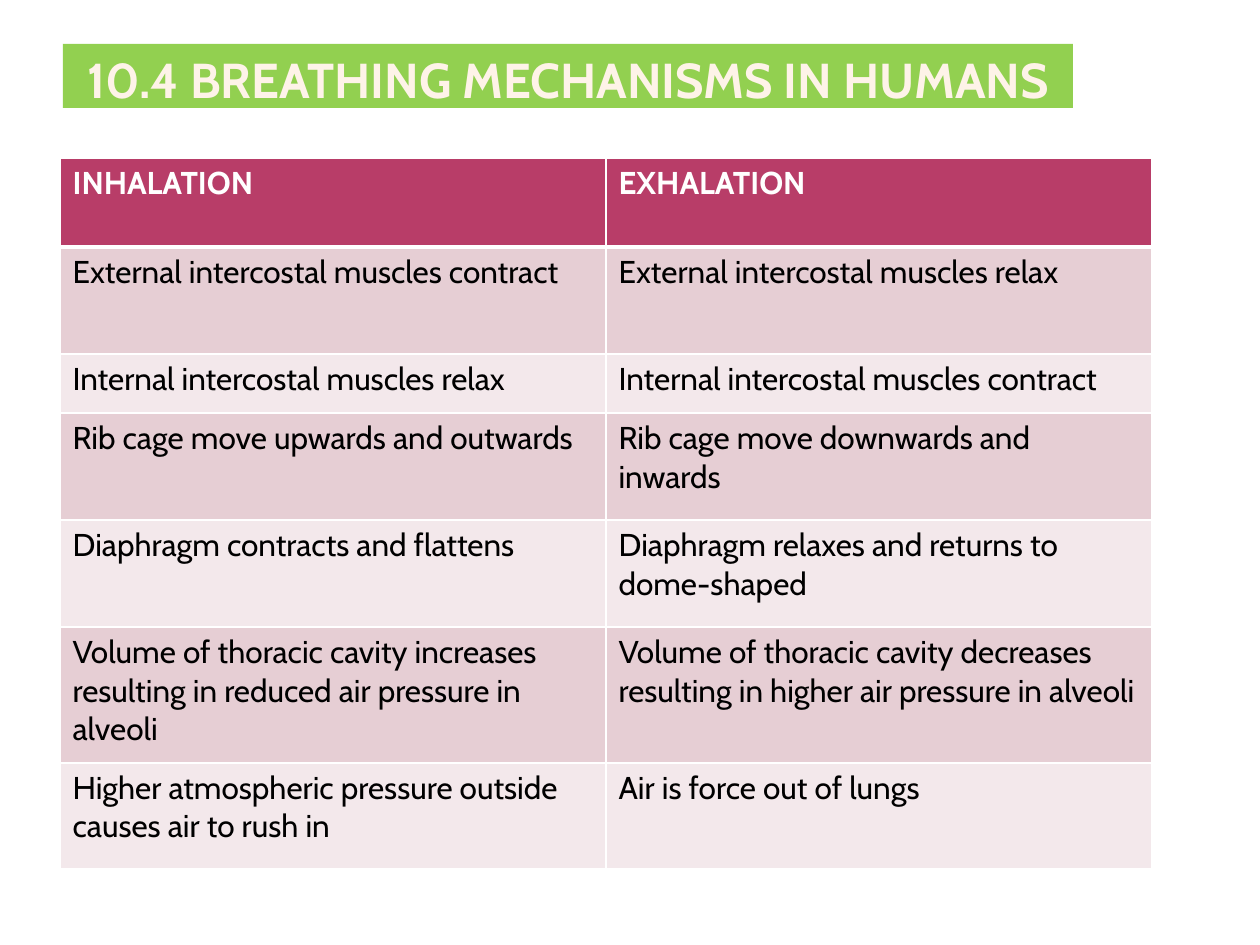
from lxml import etree
from pptx import Presentation
from pptx.dml.color import RGBColor
from pptx.enum.shapes import MSO_SHAPE
from pptx.enum.text import MSO_ANCHOR, PP_ALIGN
from pptx.oxml.ns import qn
from pptx.util import Pt

RECTANGLE = MSO_SHAPE.RECTANGLE
TOP, BOTTOM = MSO_ANCHOR.TOP, MSO_ANCHOR.BOTTOM
LEFT, CENTER = PP_ALIGN.LEFT, PP_ALIGN.CENTER

EMU_PER_PX = 914400 / 126
FONT = "Cabin"

WHITE = RGBColor(0xFF, 0xFF, 0xFF)
BLACK = RGBColor(0, 0, 0)
CREAM = RGBColor(0xFE, 0xF3, 0xE8)
GREEN = RGBColor(0x92, 0xD0, 0x50)
CRIMSON = RGBColor(0xB8, 0x3D, 0x68)
BANDS = (RGBColor(0xE6, 0xCE, 0xD4), RGBColor(0xF3, 0xE8, 0xEB))

BREATHING = [
    ("INHALATION", "EXHALATION"),
    ("External intercostal muscles contract", "External intercostal muscles relax"),
    ("Internal intercostal muscles relax", "Internal intercostal muscles contract"),
    ("Rib cage move upwards and outwards", "Rib cage move downwards and inwards"),
    ("Diaphragm contracts and flattens",
     "Diaphragm relaxes and returns to dome-shaped"),
    ("Volume of thoracic cavity increases resulting in reduced air pressure in alveoli",
     "Volume of thoracic cavity decreases resulting in higher air pressure in alveoli"),
    ("Higher atmospheric pressure outside causes air to rush in",
     "Air is force out of lungs"),
]
ROW_HEIGHTS = (89, 107, 59, 107, 107, 136, 106)
COLUMN_WIDTH = 546


def px(length):
    return round(length * EMU_PER_PX)


def write_text(frame, text, size=18, color=BLACK, bold=False, align=LEFT):
    frame.word_wrap = True
    paragraph = frame.paragraphs[0]
    paragraph.alignment = align
    run = paragraph.add_run()
    run.text = text
    run.font.name = FONT
    run.font.size = Pt(size)
    run.font.bold = bold
    run.font.color.rgb = color


def set_borders(cell, color, **widths):
    """Draw the left, right, top and bottom borders, with widths in points."""
    properties = cell._tc.get_or_add_tcPr()
    for index, side in enumerate("LRTB"):
        line = etree.Element(qn(f"a:ln{side}"), w=str(Pt(widths.get(side, 1))))
        fill = etree.SubElement(line, qn("a:solidFill"))
        etree.SubElement(fill, qn("a:srgbClr"), val=str(color))
        properties.insert(index, line)


class SlideBuilder:
    def __init__(self, slide):
        self.slide = slide

    def banner(self, text, left, top, width, height):
        box = self.slide.shapes.add_shape(
            RECTANGLE, px(left), px(top), px(width), px(height))
        box.shadow.inherit = False
        box.fill.solid()
        box.fill.fore_color.rgb = GREEN
        box.line.fill.background()
        frame = box.text_frame
        frame.margin_left = frame.margin_right = px(6)
        frame.margin_top = frame.margin_bottom = 0
        frame.vertical_anchor = BOTTOM
        write_text(frame, text, size=28, color=CREAM, bold=True, align=CENTER)

    def comparison(self, rows, left, top, column_width, row_heights):
        column_count = len(rows[0])
        table = self.slide.shapes.add_table(
            len(rows), column_count, px(left), px(top),
            px(column_width * column_count), px(sum(row_heights))).table
        for column in table.columns:
            column.width = px(column_width)
        for index, (texts, height) in enumerate(zip(rows, row_heights)):
            table.rows[index].height = px(height)
            for column, text in enumerate(texts):
                self.cell(table.cell(index, column), text, index)

    def cell(self, cell, text, row):
        header = row == 0
        cell.vertical_anchor = TOP
        cell.fill.solid()
        cell.fill.fore_color.rgb = CRIMSON if header else BANDS[(row - 1) % 2]
        set_borders(cell, WHITE, T=3 if row == 1 else 1, B=3 if header else 1)
        write_text(cell.text_frame, text, color=WHITE if header else BLACK,
                   bold=header)


def main():
    presentation = Presentation()
    presentation.slide_width = px(1260)
    presentation.slide_height = px(945)
    blank = presentation.slide_layouts[6]
    builder = SlideBuilder(presentation.slides.add_slide(blank))

    # Title
    builder.banner("10.4 BREATHING MECHANISMS IN HUMANS", 63, 44, 1010, 64)

    # Inhalation and exhalation side by side
    builder.comparison(BREATHING, 60, 158, COLUMN_WIDTH, ROW_HEIGHTS)

    presentation.save("out.pptx")


if __name__ == "__main__":
    main()
